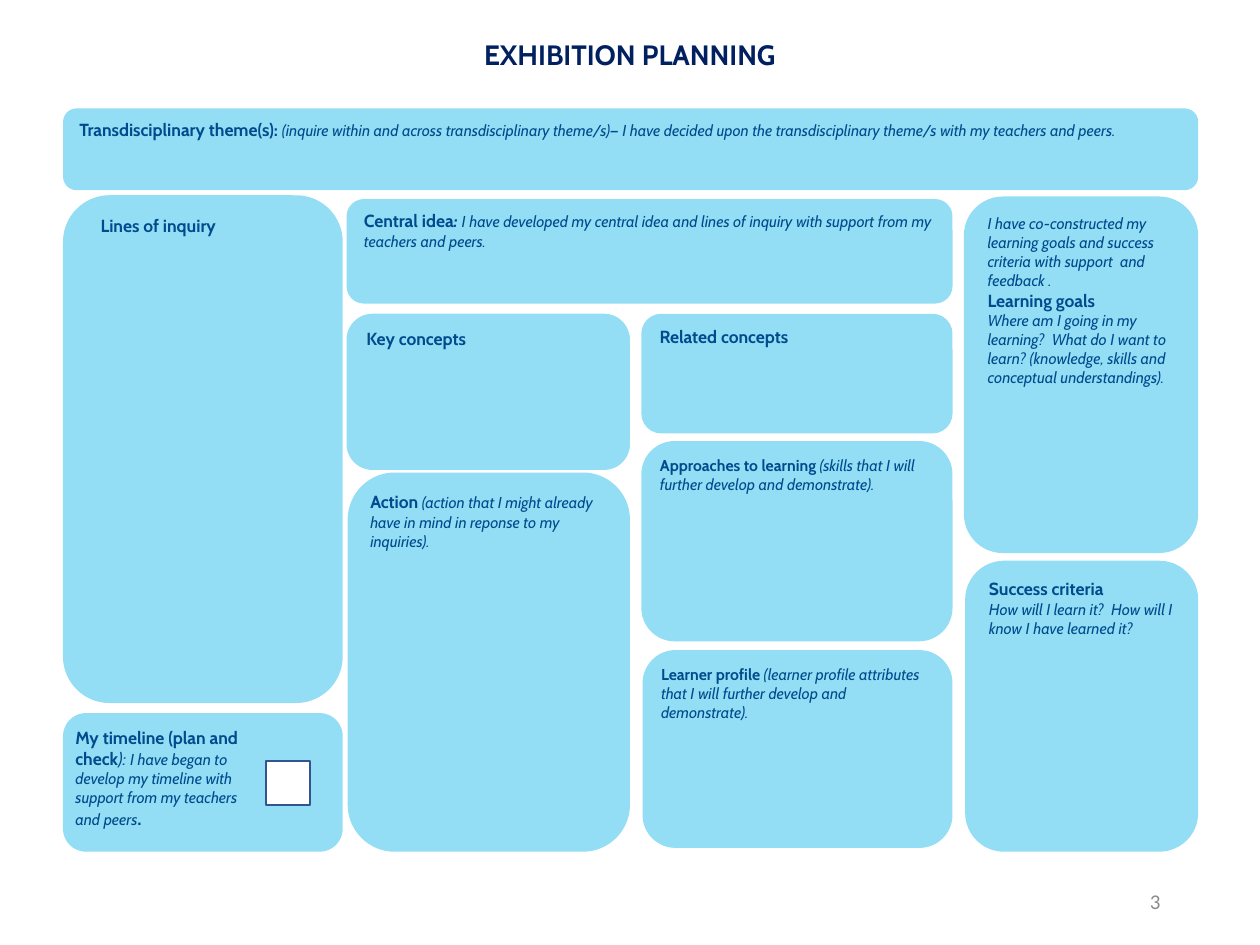
from dataclasses import dataclass

from pptx import Presentation
from pptx.dml.color import RGBColor
from pptx.enum.shapes import MSO_SHAPE
from pptx.enum.text import MSO_ANCHOR, MSO_AUTO_SIZE, PP_ALIGN
from pptx.util import Inches, Pt

ROUNDED = MSO_SHAPE.ROUNDED_RECTANGLE
RECTANGLE = MSO_SHAPE.RECTANGLE
TOP = MSO_ANCHOR.TOP
MIDDLE = MSO_ANCHOR.MIDDLE
LEFT = PP_ALIGN.LEFT
CENTER = PP_ALIGN.CENTER
RIGHT = PP_ALIGN.RIGHT
NO_FIT = MSO_AUTO_SIZE.NONE

SKY = RGBColor(0x93, 0xDE, 0xF5)
BLUE = RGBColor(0x00, 0x4B, 0x8D)
NAVY = RGBColor(0x00, 0x20, 0x60)
GRAY = RGBColor(0x8C, 0x8C, 0x8C)
WHITE = RGBColor(0xFF, 0xFF, 0xFF)
OUTLINE = RGBColor(0x32, 0x54, 0x91)

WIDE_INSETS = (0.1, 0.05)
SLIM_INSETS = (0.07, 0.04)


@dataclass(frozen=True)
class Span:
    text: str
    size: float = 9
    bold: bool = False
    italic: bool = False


@dataclass(frozen=True)
class Panel:
    left: float
    top: float
    width: float
    height: float
    paragraphs: tuple[tuple[Span, ...], ...] = ()
    insets: tuple[float, float] = WIDE_INSETS
    indent: float = 0


def heading(text: str, size: float = 10) -> Span:
    return Span(text, size, bold=True)


def hint(text: str) -> Span:
    return Span(text, italic=True)


PANELS = (
    Panel(0.5, 0.86, 9.01, 0.65, ((
        heading("Transdisciplinary theme(s): "),
        hint("(inquire within and across transdisciplinary theme/s)"),
        Span("—", bold=True, italic=True),
        hint(" I have decided upon the transdisciplinary theme/s with my teachers and peers."),
    ),)),
    Panel(0.5, 1.55, 2.22, 4.03, ((heading("Lines of inquiry"),),), indent=0.09),
    Panel(2.75, 1.58, 4.81, 0.83, ((
        heading("Central idea"),
        Span(": ", 10, bold=True, italic=True),
        hint("I have developed my central idea and lines of inquiry with support "
             "from my teachers and peers."),
    ),)),
    Panel(2.75, 2.49, 2.25, 1.24, ((heading("Key concepts"),),)),
    Panel(5.09, 2.49, 2.47, 0.95, ((heading("Related concepts"),),)),
    Panel(2.76, 3.75, 2.24, 3.01, ((
        heading("Action"),
        hint(" (action that I might already have in mind in reponse to my inquiries)."),
    ),), SLIM_INSETS),
    Panel(7.65, 1.56, 1.86, 2.83, (
        (hint("I have co-constructed my learning goals and success criteria "
              "with support  and feedback ."),),
        (heading("Learning goals"),),
        (hint("Where am I going in my learning?  What do I want to learn? "
              "(knowledge, skills and conceptual understandings)."),),
    )),
    Panel(7.66, 4.45, 1.85, 2.31, (
        (heading("Success criteria"),),
        (hint("How will I learn it?  How will I know I have learned it?"),),
    )),
    Panel(5.09, 3.5, 2.47, 1.59, ((
        heading("Approaches to learning ", 9),
        hint("(skills that I will further develop and demonstrate)."),
    ),), SLIM_INSETS),
    Panel(5.1, 5.16, 2.46, 1.57, ((
        heading("Learner profile ", 9),
        hint("(learner profile attributes that I will further develop and demonstrate)."),
    ),), SLIM_INSETS),
    Panel(0.5, 5.66, 2.22, 1.1),
)

TIMELINE = Panel(0.5, 5.72, 1.61, 0.92, ((
    heading("My timeline (plan and check"),
    Span("): ", 10, italic=True),
    hint("I have began to develop my timeline with support from my teachers and peers"),
    heading(".", 10.5),
),))
CHECKBOX = Panel(2.11, 6.04, 0.35, 0.35)
TITLE = Panel(0, 0.25, 10, 0.37, ((heading("EXHIBITION PLANNING", 16),),))
PAGE_NUMBER = Panel(7.06, 6.95, 2.25, 0.4, ((Span("3", 12),),))


def bounds(panel: Panel) -> tuple[Inches, ...]:
    return tuple(Inches(value) for value in
                 (panel.left, panel.top, panel.width, panel.height))


def write(box, panel: Panel, color: RGBColor = BLUE, font: str = "Cabin",
          align: PP_ALIGN = LEFT, anchor: MSO_ANCHOR = TOP) -> None:
    frame = box.text_frame
    frame.word_wrap = True
    frame.auto_size = NO_FIT
    frame.vertical_anchor = anchor
    side, edge = panel.insets
    frame.margin_left = Inches(side + panel.indent)
    frame.margin_right = Inches(side)
    frame.margin_top = frame.margin_bottom = Inches(edge)
    for index, spans in enumerate(panel.paragraphs):
        para = frame.add_paragraph() if index else frame.paragraphs[0]
        para.alignment = align
        para.font.name = font
        para.font.color.rgb = color
        for span in spans:
            run = para.add_run()
            run.text = span.text
            run.font.size = Pt(span.size)
            run.font.bold = span.bold
            run.font.italic = span.italic


def add_panel(page, panel: Panel) -> None:
    box = page.shapes.add_shape(ROUNDED, *bounds(panel))
    box.shadow.inherit = False
    box.fill.solid()
    box.fill.fore_color.rgb = SKY
    box.line.fill.background()
    write(box, panel)


def add_checkbox(page, panel: Panel) -> None:
    box = page.shapes.add_shape(RECTANGLE, *bounds(panel))
    box.shadow.inherit = False
    box.fill.solid()
    box.fill.fore_color.rgb = WHITE
    box.line.color.rgb = OUTLINE
    box.line.width = Pt(1)


def main() -> None:
    deck = Presentation()
    deck.slide_width, deck.slide_height = Inches(10), Inches(7.5)
    page = deck.slides.add_slide(deck.slide_layouts[5])

    title = page.shapes.title
    title.left, title.top, title.width, title.height = bounds(TITLE)
    write(title, TITLE, NAVY, align=CENTER)

    for panel in PANELS:
        add_panel(page, panel)
    write(page.shapes.add_textbox(*bounds(TIMELINE)), TIMELINE)
    add_checkbox(page, CHECKBOX)
    write(page.shapes.add_textbox(*bounds(PAGE_NUMBER)), PAGE_NUMBER,
          GRAY, "Calibri", RIGHT, MIDDLE)

    deck.save("out.pptx")


if __name__ == "__main__":
    main()
